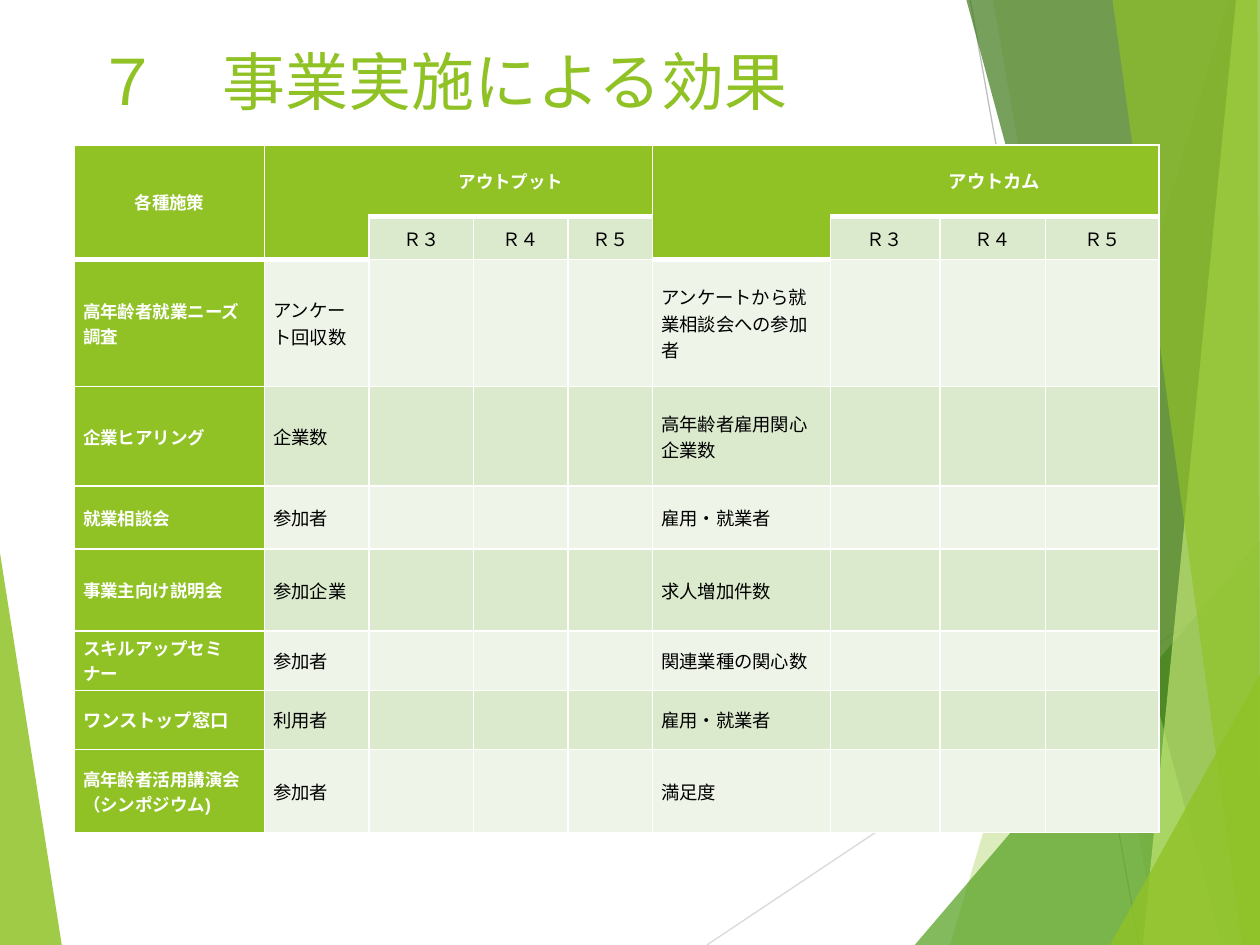
"""Build the slide that sets out the expected effects of the programme."""
from dataclasses import dataclass

from lxml.etree import SubElement
from pptx import Presentation
from pptx.dml.color import RGBColor
from pptx.enum.shapes import MSO_CONNECTOR
from pptx.enum.text import MSO_ANCHOR, PP_ALIGN
from pptx.oxml.ns import qn
from pptx.util import Inches, Pt


@dataclass(frozen=True)
class Theme:
    green: str = "90C226"
    leaf: str = "54A021"
    forest: str = "3F7819"
    lime: str = "C0E474"
    band_dark: str = "DBE9CD"
    band_light: str = "EEF4E8"
    white: str = "FFFFFF"
    black: str = "000000"
    pale_line: str = "D9D9D9"
    grey_line: str = "BFBFBF"
    title_font: str = "Lato"
    body_font: str = "Arial"
    title_size: float = 36
    label_size: float = 10
    body_size: float = 10.5
    hairline: float = 0.75
    thin: float = 1
    thick: float = 3


THEME = Theme()
GRID_COLUMNS, GRID_ROWS = 10, 7.5

FACETS = [
    ([(0, 4.39), (0.49, 7.5), (0, 7.5)], THEME.green, 85),
    ([(9.75, 0), (7.54, 7.5), (10, 7.5), (10, 0)], THEME.green, 30),
    ([(7.88, 0), (9.19, 7.5), (10, 7.5), (10, 0)], THEME.green, 20),
    ([(7.26, 7.5), (10, 4.29), (10, 7.5)], THEME.leaf, 72),
    ([(7.67, 0), (9.7, 7.5), (10, 7.5), (10, 0)], THEME.forest, 70),
    ([(9.81, 0), (9.07, 7.5), (10, 7.5), (10, 0)], THEME.lime, 70),
    ([(8.83, 0), (9.86, 7.5), (10, 7.5), (9.98, 0)], THEME.green, 65),
    ([(8.81, 7.5), (10, 5.35), (10, 7.5)], THEME.green, 80),
]
RAYS = [((5.61, 7.5), (10, 4.57), THEME.pale_line),
        ((7.7, 0), (9.04, 7.5), THEME.grey_line)]

COLUMN_WIDTHS = [1.51, 0.83, 0.83, 0.75, 0.67, 1.41, 0.87, 0.84, 0.9]
ROW_HEIGHTS = [0.57, 0.34, 1.01, 0.79, 0.5, 0.65, 0.47, 0.47, 0.66]
MEASURES = [
    ("高年齢者就業ニーズ調査", "アンケート回収数", "アンケートから就業相談会への参加者"),
    ("企業ヒアリング", "企業数", "高年齢者雇用関心企業数"),
    ("就業相談会", "参加者", "雇用・就業者"),
    ("事業主向け説明会", "参加企業", "求人増加件数"),
    ("スキルアップセミナー", "参加者", "関連業種の関心数"),
    ("ワンストップ窓口", "利用者", "雇用・就業者"),
    ("高年齢者活用講演会（シンポジウム)", "参加者", "満足度"),
]
YEARS = ["Ｒ３", "Ｒ４", "Ｒ５"]
LARGER_LABELS = {"アウトカム", "ワンストップ窓口"}
OUTPUT, OUTCOME = 1, 5
TALL_HEADERS = (0, OUTPUT, OUTCOME)


def write(frame, text, *, font, size, color, bold=False, align=PP_ALIGN.LEFT):
    """Put formatted text into the first paragraph of a text frame."""
    paragraph = frame.paragraphs[0]
    paragraph.alignment = align
    run = paragraph.add_run()
    run.text = text
    run.font.name = font
    run.font.size = Pt(size)
    run.font.bold = bold
    run.font.color.rgb = RGBColor.from_string(color)


def border_width(row, column, side):
    """Return the border width of one cell side, or zero for no line."""
    group_edges = {(OUTPUT, "R"), (OUTPUT + 1, "L"),
                   (OUTCOME, "R"), (OUTCOME + 1, "L")}
    if row == 0 and (column, side) in group_edges:
        return 0
    tall = column in TALL_HEADERS
    under_header = (row == 0 and side == "B"
                    or row == 1 and side == ("B" if tall else "T")
                    or row == 2 and side == "T" and tall)
    return THEME.thick if under_header else THEME.thin


class SlideBuilder:
    """Hold the theme and the current slide, and draw on a one-inch grid."""

    def __init__(self, presentation, theme):
        """Add a blank slide and work out the grid unit."""
        self.theme = theme
        self.slide = presentation.slides.add_slide(presentation.slide_layouts[6])
        self.column = presentation.slide_width / GRID_COLUMNS
        self.row = presentation.slide_height / GRID_ROWS

    def place(self, *lengths):
        """Turn alternating grid columns and rows into lengths."""
        units = (self.column, self.row) * (len(lengths) // 2)
        return [round(length * unit) for length, unit in zip(lengths, units)]

    def facet(self, corners, color, opacity):
        """Draw a translucent polygon."""
        points = [self.place(*corner) for corner in corners]
        builder = self.slide.shapes.build_freeform(*points[0])
        builder.add_line_segments(points[1:], close=True)
        shape = builder.convert_to_shape()
        shape.shadow.inherit = False
        shape.fill.solid()
        shape.fill.fore_color.rgb = RGBColor.from_string(color)
        shape.line.fill.background()
        tint = shape.element.spPr.find(".//" + qn("a:srgbClr"))
        SubElement(tint, qn("a:alpha"), val=str(opacity * 1000))

    def ray(self, start, end, color):
        """Draw a thin straight line."""
        line = self.slide.shapes.add_connector(
            MSO_CONNECTOR.STRAIGHT, *self.place(*start, *end))
        line.line.color.rgb = RGBColor.from_string(color)
        line.line.width = Pt(self.theme.hairline)
        SubElement(line.element.spPr, qn("a:effectLst"))

    def title(self, text, *area):
        """Write the slide title."""
        frame = self.slide.shapes.add_textbox(*self.place(*area)).text_frame
        frame.word_wrap = True
        write(frame, text, font=self.theme.title_font,
              size=self.theme.title_size, color=self.theme.green)

    def table(self, left, top, widths, heights):
        """Add a table and return it with its columns and rows sized."""
        area = self.place(left, top, sum(widths), sum(heights))
        table = self.slide.shapes.add_table(len(heights), len(widths), *area).table
        for column, width in zip(table.columns, widths):
            column.width = round(width * self.column)
        for row, height in zip(table.rows, heights):
            row.height = round(height * self.row)
        return table

    def cell(self, table, row, column, text, centred):
        """Style one cell and write its text."""
        theme = self.theme
        header = column == 0 or row == 0 or row == 1 and column in TALL_HEADERS
        band = theme.band_dark if row % 2 else theme.band_light
        cell = table.cell(row, column)
        cell.vertical_anchor = MSO_ANCHOR.MIDDLE
        cell.margin_left = cell.margin_right = Inches(0.07)
        cell.margin_top = cell.margin_bottom = 0
        properties = cell._tc.get_or_add_tcPr()
        for side in "LRTB":
            width = border_width(row, column, side)
            border = SubElement(properties, qn("a:ln" + side), w=str(Pt(width)))
            if width:
                paint = SubElement(border, qn("a:solidFill"))
                SubElement(paint, qn("a:srgbClr"), val=theme.white)
            else:
                SubElement(border, qn("a:noFill"))
        cell.fill.solid()
        cell.fill.fore_color.rgb = RGBColor.from_string(theme.green if header else band)
        if text:
            small = header and text not in LARGER_LABELS
            write(cell.text_frame, text, font=theme.body_font, bold=header,
                  size=theme.label_size if small else theme.body_size,
                  color=theme.white if header else theme.black,
                  align=PP_ALIGN.CENTER if centred else PP_ALIGN.LEFT)


def effect_rows():
    """Return the table text, row by row."""
    gap = [""] * len(YEARS)
    heading = ["各種施策", "", "アウトプット", "", "", "", "アウトカム", "", ""]
    years = ["", "", *YEARS, "", *YEARS]
    return [heading, years] + [[measure, output, *gap, outcome, *gap]
                               for measure, output, outcome in MEASURES]


def main():
    """Build and save the slide."""
    presentation = Presentation()
    presentation.slide_width, presentation.slide_height = Inches(10), Inches(7.5)
    builder = SlideBuilder(presentation, THEME)
    left_facet, *right_facets = FACETS
    builder.facet(*left_facet)
    for ray in RAYS:
        builder.ray(*ray)
    for facet in right_facets:
        builder.facet(*facet)
    builder.title("７　事業実施による効果", 0.67, 0.29, 6.94, 1.44)
    effects = builder.table(0.59, 1.15, COLUMN_WIDTHS, ROW_HEIGHTS)
    for row, texts in enumerate(effect_rows()):
        for column, text in enumerate(texts):
            builder.cell(effects, row, column, text, centred=row < 2)
    for column in TALL_HEADERS:
        effects.cell(0, column).merge(effects.cell(1, column))
    for group in (OUTPUT, OUTCOME):
        effects.cell(0, group + 1).merge(effects.cell(0, group + len(YEARS)))
    presentation.save("out.pptx")


if __name__ == "__main__":
    main()
